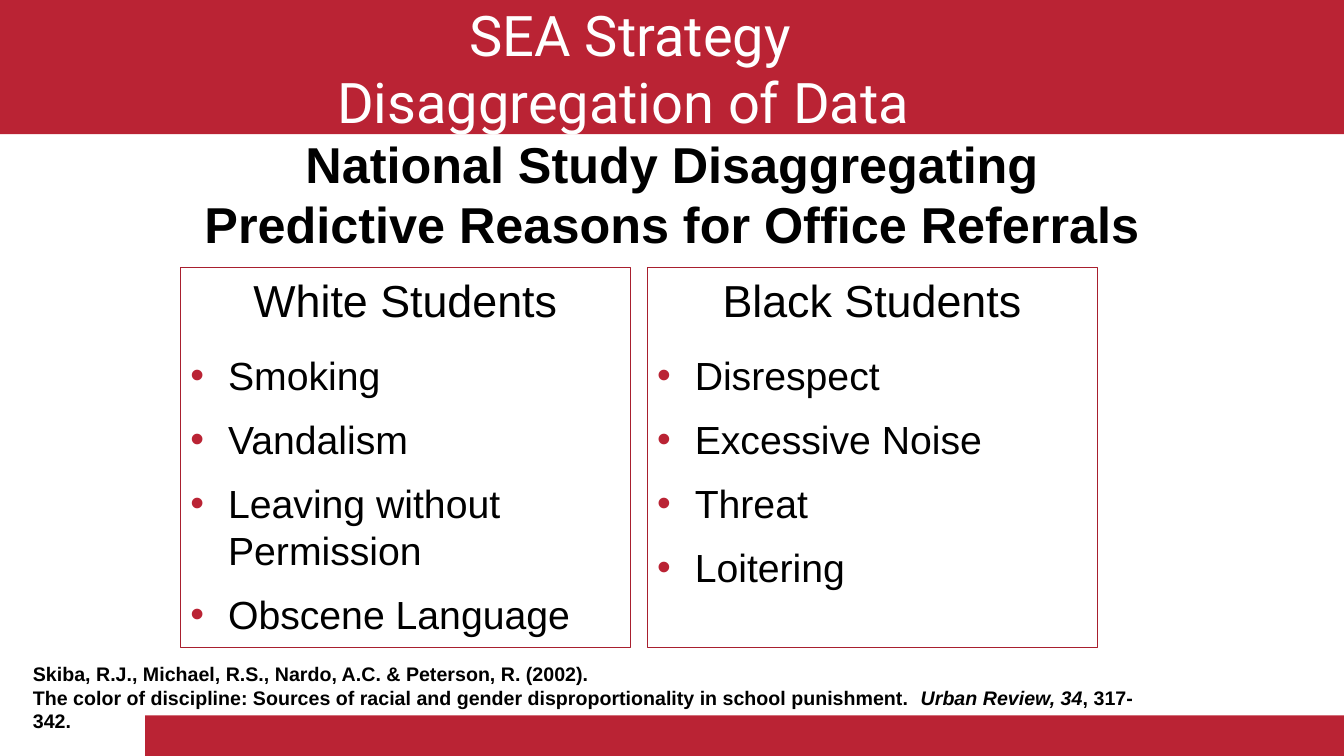
from dataclasses import dataclass

from lxml.etree import SubElement
from pptx import Presentation
from pptx.dml.color import RGBColor as Color
from pptx.enum.shapes import MSO_SHAPE as Shape
from pptx.enum.text import MSO_ANCHOR as Anchor, PP_ALIGN as Align
from pptx.oxml.ns import qn
from pptx.util import Cm, Pt


@dataclass(frozen=True)
class Theme:
    red: str = "BA2334"
    outline: str = "A81F2E"
    white: str = "FFFFFF"
    black: str = "000000"
    title_font: str = "Roboto"
    body_font: str = "Arial"
    title: int = 40
    headline: int = 36
    heading: int = 32
    bullet: int = 28
    citation: int = 14


theme = Theme()


def write(para, text, size, font=theme.body_font, color=theme.black, bold=False,
          italic=False, align=Align.LEFT, before=0, after=0, bullet=False):
    para.alignment = align
    para.space_before, para.space_after = Pt(before), Pt(after)
    if bullet:
        props = para._p.get_or_add_pPr()
        props.set("marL", str(Cm(0.95)))
        props.set("indent", str(Cm(-0.95)))
        SubElement(SubElement(props, qn("a:buClr")), qn("a:srgbClr"), val=theme.red)
        SubElement(props, qn("a:buFont"), typeface=font)
        SubElement(props, qn("a:buChar"), char="•")
    span = para.add_run()
    span.text = text
    span.font.name, span.font.size = font, Pt(size)
    span.font.bold, span.font.italic = bold, italic
    span.font.color.rgb = Color.from_string(color)


def add_box(page, left, top, width, height):
    box = page.shapes.add_textbox(Cm(left), Cm(top), Cm(width), Cm(height))
    box.text_frame.word_wrap = True
    return box


deck = Presentation()
deck.slide_width, deck.slide_height = Cm(33.87), Cm(19.05)
page = deck.slides.add_slide(deck.slide_layouts[6])

for left, top, width, height in [(0, 0, 33.87, 3.38), (3.66, 18.03, 30.21, 1.02)]:
    band = page.shapes.add_shape(Shape.RECTANGLE, Cm(left), Cm(top), Cm(width), Cm(height))
    band.shadow.inherit = False
    band.fill.solid()
    band.fill.fore_color.rgb = Color.from_string(theme.red)
    band.line.fill.background()

title = add_box(page, 3.18, 0.11, 25.4, 3.18).text_frame
title.vertical_anchor = Anchor.MIDDLE
title_style = dict(size=theme.title, font=theme.title_font, color=theme.white,
                   align=Align.CENTER)
write(title.paragraphs[0], "SEA Strategy", **title_style)
write(title.add_paragraph(), "Disaggregation of Data ", **title_style)

headline = add_box(page, 4.24, 3.23, 25.4, 3.33).text_frame
write(headline.paragraphs[0],
      "National Study Disaggregating Predictive Reasons for Office Referrals",
      theme.headline, bold=True, align=Align.CENTER, after=12)

referral_reasons = {
    "White Students": ["Smoking", "Vandalism", "Leaving without Permission", "Obscene Language"],
    "Black Students": ["Disrespect", "Excessive Noise", "Threat", "Loitering"],
}
for column, (students, reasons) in enumerate(referral_reasons.items()):
    box = add_box(page, 4.55 + column * 11.76, 6.75, 11.34, 9.58)
    box.line.color.rgb = Color.from_string(theme.outline)
    box.line.width = Pt(0.75)
    frame = box.text_frame
    write(frame.paragraphs[0], students, theme.heading, align=Align.CENTER, after=12)
    for reason in reasons:
        write(frame.add_paragraph(), reason, theme.bullet, before=6, after=6, bullet=True)

citation = add_box(page, 0.58, 16.56, 29.06, 1.45).text_frame
write(citation.paragraphs[0], "Skiba, R.J., Michael, R.S., Nardo, A.C. & Peterson, R. (2002).",
      theme.citation, bold=True)
article = citation.add_paragraph()
for text, italic in [
    ("The color of discipline: Sources of racial and gender disproportionality "
     "in school punishment.  ", False),
    ("Urban Review, 34", True),
    (", 317-342.", False),
]:
    write(article, text, theme.citation, bold=True, italic=italic)

deck.save("out.pptx")
